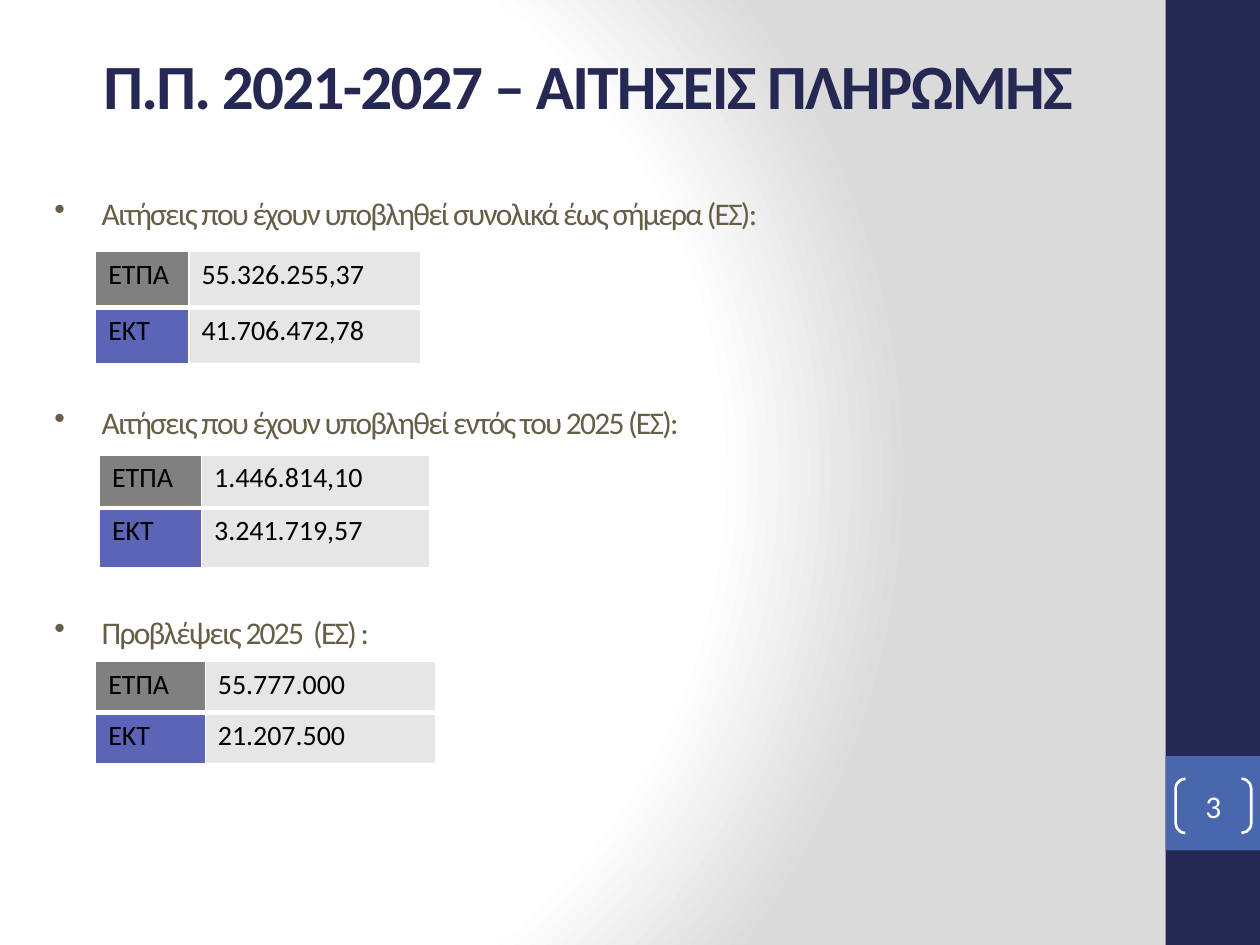
from pptx import Presentation
from pptx.dml.color import RGBColor
from pptx.enum.shapes import MSO_SHAPE
from pptx.enum.text import MSO_ANCHOR, PP_ALIGN
from pptx.oxml import parse_xml
from pptx.oxml.ns import nsdecls, qn
from pptx.util import Pt

INK = {
    "navy": "242852",
    "blue": "4A66AC",
    "olive": "675E47",
    "gray": "808080",
    "violet": "5C64B7",
    "pale": "E6E6E6",
    "edge": "DADADA",
    "white": "FFFFFF",
    "black": "000000",
}

ITEMS = [
    "Αιτήσεις που έχουν υποβληθεί συνολικά έως σήμερα (ΕΣ):",
    "Αιτήσεις που έχουν υποβληθεί εντός του 2025 (ΕΣ):",
    "Προβλέψεις 2025  (ΕΣ) :",
]

TABLES = [
    (54.7, 143.5, (53.3, 132.7), (32.2, 32.2), ("55.326.255,37", "41.706.472,78")),
    (56.9, 260, (58.3, 130.3), (30.2, 34), ("1.446.814,10", "3.241.719,57")),
    (54.7, 378, (62.6, 131.8), (29.3, 29.3), ("55.777.000", "21.207.500")),
]


def color(name):
    return RGBColor.from_string(INK[name])


def paint(fill, name):
    fill.solid()
    fill.fore_color.rgb = color(name)


def style(para, size, name, bold=False):
    font = para.font
    font.name = "Calibri"
    font.size = Pt(size)
    font.bold = bold
    font.color.rgb = color(name)


def tighten(para):
    for run in para.runs:
        run.font._element.set("spc", "-100")


def add_back(slide):
    fill = slide.background.fill
    fill.gradient()
    stops = "".join(
        f'<a:gs pos="{pos * 1000}"><a:srgbClr val="{INK[name]}"/></a:gs>'
        for pos, name in ((0, "white"), (75, "white"), (100, "edge"))
    )
    grad = slide._element.find(".//" + qn("a:gradFill"))
    grad.getparent().replace(grad, parse_xml(
        f'<a:gradFill {nsdecls("a")} rotWithShape="1"><a:gsLst>{stops}</a:gsLst>'
        '<a:path path="circle"><a:fillToRect l="20000" t="50000" r="100000" b="50000"/>'
        '</a:path></a:gradFill>'
    ))


def add_band(slide, top, high, name):
    band = slide.shapes.add_shape(MSO_SHAPE.RECTANGLE, Pt(666), Pt(top), Pt(54), Pt(high))
    band.shadow.inherit = False
    paint(band.fill, name)
    band.line.fill.background()


def add_title(slide, text):
    frame = slide.shapes.add_textbox(Pt(36), Pt(16), Pt(600), Pt(64)).text_frame
    frame.word_wrap = True
    frame.vertical_anchor = MSO_ANCHOR.MIDDLE
    para = frame.paragraphs[0]
    para.text = text
    para.alignment = PP_ALIGN.CENTER
    style(para, 36, "navy", True)
    tighten(para)


def add_list(slide, items):
    frame = slide.shapes.add_textbox(Pt(24), Pt(77), Pt(623.5), Pt(385)).text_frame
    frame.word_wrap = True
    frame.margin_top = Pt(34)
    for i, text in enumerate(items):
        para = frame.add_paragraph() if i else frame.paragraphs[0]
        para.text = text
        para.alignment = PP_ALIGN.JUSTIFY
        para.space_before = Pt(98 if i else 0)
        style(para, 18, "olive")
        tighten(para)
        props = para._p.get_or_add_pPr()
        props.set("marL", str(Pt(27)))
        props.set("indent", str(-Pt(27)))
        mark = parse_xml(f'<a:buChar {nsdecls("a")} char="•"/>')
        props.find(qn("a:defRPr")).addprevious(mark)


def add_edges(cell, row):
    wide = {"L": 1, "R": 1, "T": 3 if row else 1, "B": 1 if row else 3}
    props = cell._tc.get_or_add_tcPr()
    for i, (side, size) in enumerate(wide.items()):
        props.insert(i, parse_xml(
            f'<a:ln{side} {nsdecls("a")} w="{Pt(size)}"><a:solidFill>'
            f'<a:srgbClr val="{INK["white"]}"/></a:solidFill></a:ln{side}>'
        ))


def add_grid(slide, left, top, cols, rows, sums):
    table = slide.shapes.add_table(
        2, 2, Pt(left), Pt(top), Pt(sum(cols)), Pt(sum(rows))).table
    for col, wide in zip(table.columns, cols):
        col.width = Pt(wide)
    for row, high in zip(table.rows, rows):
        row.height = Pt(high)
    for r, (fund, tint) in enumerate((("ΕΤΠΑ", "gray"), ("ΕΚΤ", "violet"))):
        for c, (text, name) in enumerate(((fund, tint), (sums[r], "pale"))):
            cell = table.cell(r, c)
            cell.text = text
            style(cell.text_frame.paragraphs[0], 16, "black")
            paint(cell.fill, name)
            add_edges(cell, r)


def add_number(slide, text):
    mark = slide.shapes.add_shape(
        MSO_SHAPE.DOUBLE_BRACKET, Pt(671.8), Pt(445), Pt(43.2), Pt(31))
    mark.shadow.inherit = False
    mark.adjustments[0] = 0.18
    mark.fill.background()
    mark.line.color.rgb = color("white")
    mark.line.width = Pt(1.5)
    frame = mark.text_frame
    frame.margin_left = frame.margin_right = frame.margin_top = frame.margin_bottom = 0
    frame.vertical_anchor = MSO_ANCHOR.MIDDLE
    para = frame.paragraphs[0]
    para.text = text
    para.alignment = PP_ALIGN.CENTER
    style(para, 18, "white")


def main():
    deck = Presentation()
    deck.slide_width, deck.slide_height = Pt(720), Pt(540)
    slide = deck.slides.add_slide(deck.slide_layouts[6])
    add_back(slide)
    add_band(slide, 0, 540, "navy")
    add_band(slide, 432, 54, "blue")
    add_title(slide, "Π.Π. 2021-2027 – ΑΙΤΗΣΕΙΣ ΠΛΗΡΩΜΗΣ")
    add_list(slide, ITEMS)
    add_number(slide, "3")
    for grid in TABLES:
        add_grid(slide, *grid)
    deck.save("out.pptx")


if __name__ == "__main__":
    main()
